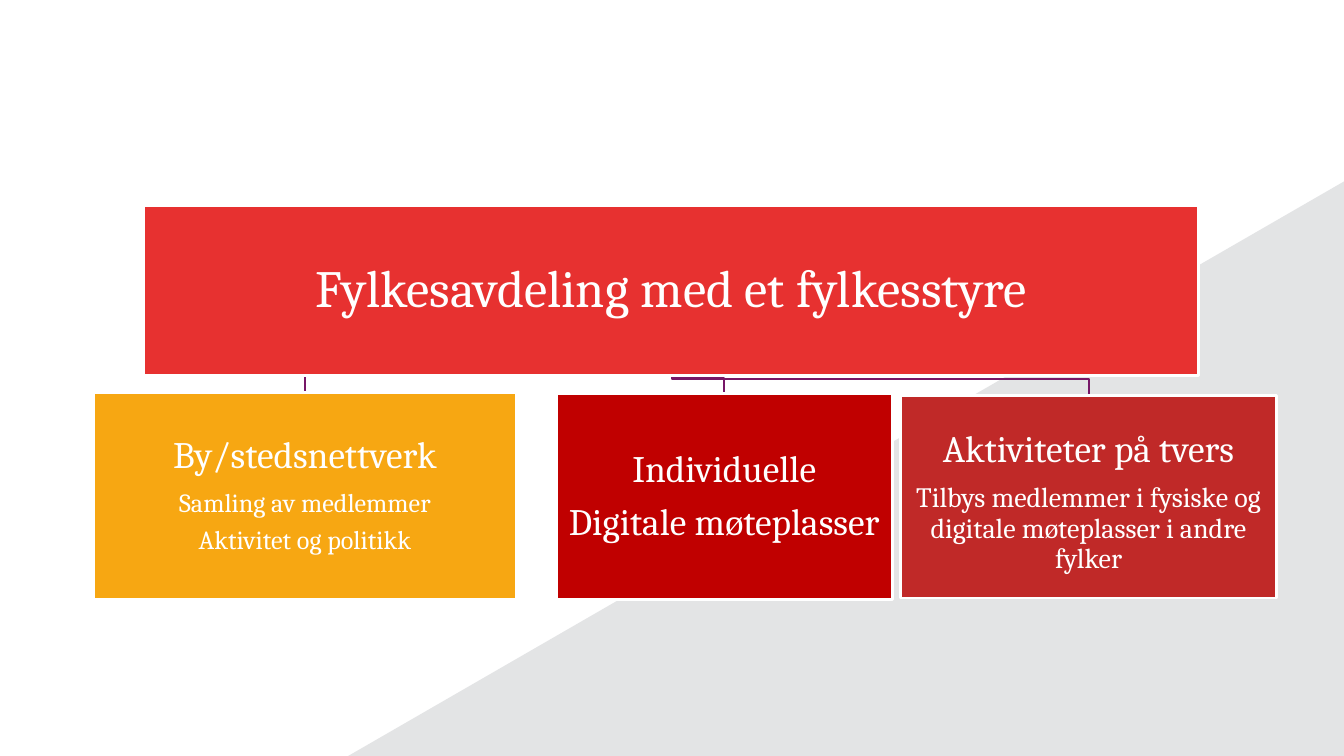
from lxml import etree
from pptx import Presentation
from pptx.dml.color import RGBColor
from pptx.enum.shapes import MSO_SHAPE
from pptx.enum.text import MSO_ANCHOR, PP_ALIGN
from pptx.oxml.ns import qn
from pptx.util import Pt


def paint(color_format, hex_color):
    color_format.rgb = RGBColor.from_string(hex_color)


def add_box(s, frame, fill, lines, inset, top_inset):
    """Add a white-bordered box holding (text, size) lines."""
    sp = s.shapes.add_shape(MSO_SHAPE.RECTANGLE, *map(Pt, frame))
    sp.shadow.inherit = False
    sp.fill.solid()
    paint(sp.fill.fore_color, fill)
    paint(sp.line.color, "FFFFFF")
    sp.line.width = Pt(1.5)
    tf = sp.text_frame
    tf.word_wrap = True
    tf.vertical_anchor = MSO_ANCHOR.MIDDLE
    tf.margin_left = tf.margin_right = tf.margin_bottom = Pt(inset)
    tf.margin_top = Pt(top_inset)
    for i, (text, size) in enumerate(lines):
        p = tf.add_paragraph() if i else tf.paragraphs[0]
        p.text = text
        p.alignment = PP_ALIGN.CENTER
        p.line_spacing = 0.9
        p.space_after = Pt(0.35 * size)
        p.font.name = "Cambria"
        p.font.size = Pt(size)
        paint(p.font.color, "FFFFFF")


prs = Presentation()
prs.slide_width, prs.slide_height = Pt(720), Pt(405)
s = prs.slides.add_slide(prs.slide_layouts[6])

# Translucent grey corner
corner = s.shapes.add_shape(MSO_SHAPE.RIGHT_TRIANGLE, Pt(298.8), Pt(-15.8), Pt(308.2), Pt(534.2))
corner.rotation = 270
corner.shadow.inherit = False
corner.fill.solid()
paint(corner.fill.fore_color, "D1D2D4")
corner.line.fill.background()
srgb = corner.fill._xPr.find(".//" + qn("a:srgbClr"))
etree.SubElement(srgb, qn("a:alpha"), val="60000")

board = (77, 110.2, 565.2, 91.2)
# frame, fill, lines, top inset
branches = [
    ((50.4, 210.2, 226.1, 110.9), "F7A712",
     [("By/stedsnettverk", 20), ("Samling av medlemmer", 14), ("Aktivitet og politikk", 14)], 0.7),
    ((298, 211, 180, 110.2), "C00000",
     [("Individuelle", 20), ("Digitale møteplasser", 20)], 0.7),
    ((482.4, 211.7, 201.6, 108.7), "C02928",
     [("Aktiviteter på tvers", 20),
      ("Tilbys medlemmer i fysiske og digitale møteplasser i andre fylker", 15)], 7),
]

# Elbow lines from the board down to each branch
start_x, start_y = 360, 200.9
for (left, top, width, height), *_ in reversed(branches):
    end_x, bend_y = left + width / 2, top - 8.6
    fb = s.shapes.build_freeform(Pt(start_x), Pt(start_y))
    fb.add_line_segments(
        [(Pt(x), Pt(y)) for x, y in ((start_x, bend_y), (end_x, bend_y), (end_x, top))],
        close=False)
    elbow = fb.convert_to_shape()
    elbow.shadow.inherit = False
    elbow.fill.background()
    paint(elbow.line.color, "771767")
    elbow.line.width = Pt(1)

add_box(s, board, "E73130", [("Fylkesavdeling med et fylkesstyre", 28)], 1.4, 1.4)
for frame, fill, lines, top_inset in branches:
    add_box(s, frame, fill, lines, 0.7, top_inset)

prs.save("out.pptx")
